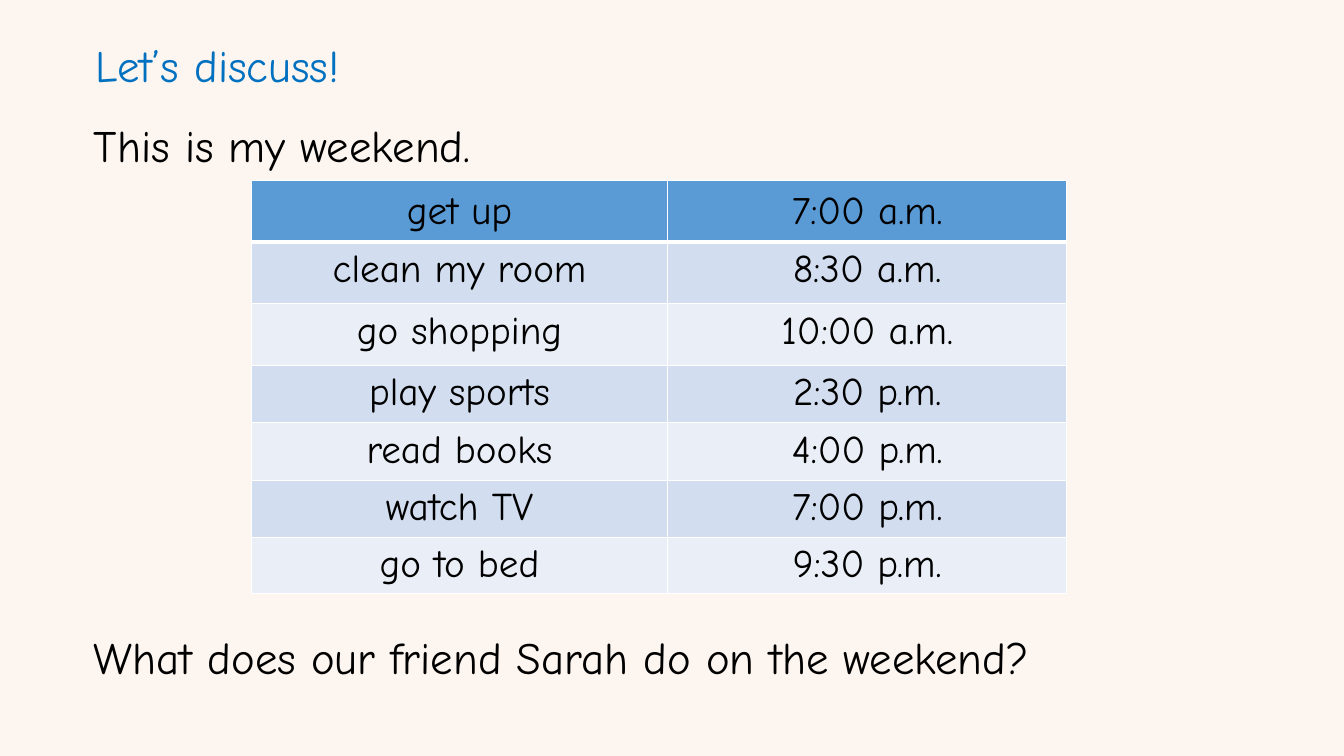
from dataclasses import dataclass

from lxml.etree import SubElement
from pptx import Presentation
from pptx.dml.color import RGBColor
from pptx.enum.text import MSO_ANCHOR as Anchor, MSO_AUTO_SIZE as AutoSize, PP_ALIGN as Align
from pptx.oxml.ns import qn
from pptx.util import Pt

FONT = "Comic Neue"
BLACK, BLUE, WHITE = "000000", "0070C0", "FFFFFF"
BACKGROUND = "FDF5EF"
HEADER_FILL, BAND_FILLS = "5B9BD5", ("D2DEEF", "EAEFF7")
COLUMN_WIDTHS = (297.5, 285)


@dataclass
class Line:
    text: str
    left: float
    top: float
    width: float
    height: float
    spacing: float = 1.0
    color: str = BLACK


@dataclass
class Activity:
    name: str
    time: str
    height: float


TITLE = Line("Let’s discuss!", 61, 23, 252, 46, color=BLUE)
LINES = (
    Line("This is my weekend.", 60, 73, 422, 54, spacing=1.2),
    Line("What does our friend Sarah do on the weekend?", 60, 427, 889, 65.5, spacing=1.5),
)
ACTIVITIES = (
    Activity("get up", "7:00 a.m.", 44),
    Activity("clean my room", "8:30 a.m.", 44),
    Activity("go shopping", "10:00 a.m.", 44),
    Activity("play sports", "2:30 p.m.", 41),
    Activity("read books", "4:00 p.m.", 41),
    Activity("watch TV", "7:00 p.m.", 41),
    Activity("go to bed", "9:30 p.m.", 40),
)


def rgb(color: str) -> RGBColor:
    return RGBColor.from_string(color)


def format_paragraph(paragraph, size: float, color: str, alignment) -> None:
    paragraph.alignment = alignment
    font = paragraph.font
    font.name, font.size, font.bold = FONT, Pt(size), False
    font.color.rgb = rgb(color)


def fill_line(shape, line: Line) -> None:
    """Place a title or text box and write its single line."""
    shape.left, shape.top = Pt(line.left), Pt(line.top)
    shape.width, shape.height = Pt(line.width), Pt(line.height)
    frame = shape.text_frame
    frame.text = line.text
    frame.word_wrap, frame.auto_size = True, AutoSize.NONE
    frame.vertical_anchor = Anchor.TOP
    paragraph = frame.paragraphs[0]
    paragraph.line_spacing = line.spacing
    format_paragraph(paragraph, 32, line.color, Align.LEFT)


def add_borders(cell, top: float, bottom: float) -> None:
    properties = cell._tc.get_or_add_tcPr()
    for side, width in (("L", 1), ("R", 1), ("T", top), ("B", bottom)):
        border = SubElement(properties, qn(f"a:ln{side}"), w=str(Pt(width)))
        SubElement(SubElement(border, qn("a:solidFill")), qn("a:srgbClr"), val=WHITE)


def add_schedule(slide) -> None:
    total_height = sum(activity.height for activity in ACTIVITIES)
    table = slide.shapes.add_table(
        len(ACTIVITIES), 2, Pt(179.5), Pt(129), Pt(sum(COLUMN_WIDTHS)), Pt(total_height)
    ).table
    for column, width in zip(table.columns, COLUMN_WIDTHS):
        column.width = Pt(width)
    for row, activity in enumerate(ACTIVITIES):
        table.rows[row].height = Pt(activity.height)
        is_header = row == 0
        fill = HEADER_FILL if is_header else BAND_FILLS[(row - 1) % 2]
        for column, text in enumerate((activity.name, activity.time)):
            cell = table.cell(row, column)
            cell.text = text
            cell.vertical_anchor = Anchor.MIDDLE if is_header else Anchor.TOP
            add_borders(cell, top=3 if row == 1 else 1, bottom=3 if is_header else 1)
            cell.fill.solid()
            cell.fill.fore_color.rgb = rgb(fill)
            format_paragraph(cell.text_frame.paragraphs[0], 28, BLACK, Align.CENTER)


def main() -> None:
    presentation = Presentation()
    presentation.slide_width, presentation.slide_height = Pt(960), Pt(540)
    title_only = presentation.slide_layouts[5]
    slide = presentation.slides.add_slide(title_only)
    slide.background.fill.solid()
    slide.background.fill.fore_color.rgb = rgb(BACKGROUND)
    fill_line(slide.shapes.title, TITLE)
    add_schedule(slide)
    for line in LINES:
        fill_line(slide.shapes.add_textbox(0, 0, 0, 0), line)
    presentation.save("out.pptx")


if __name__ == "__main__":
    main()
